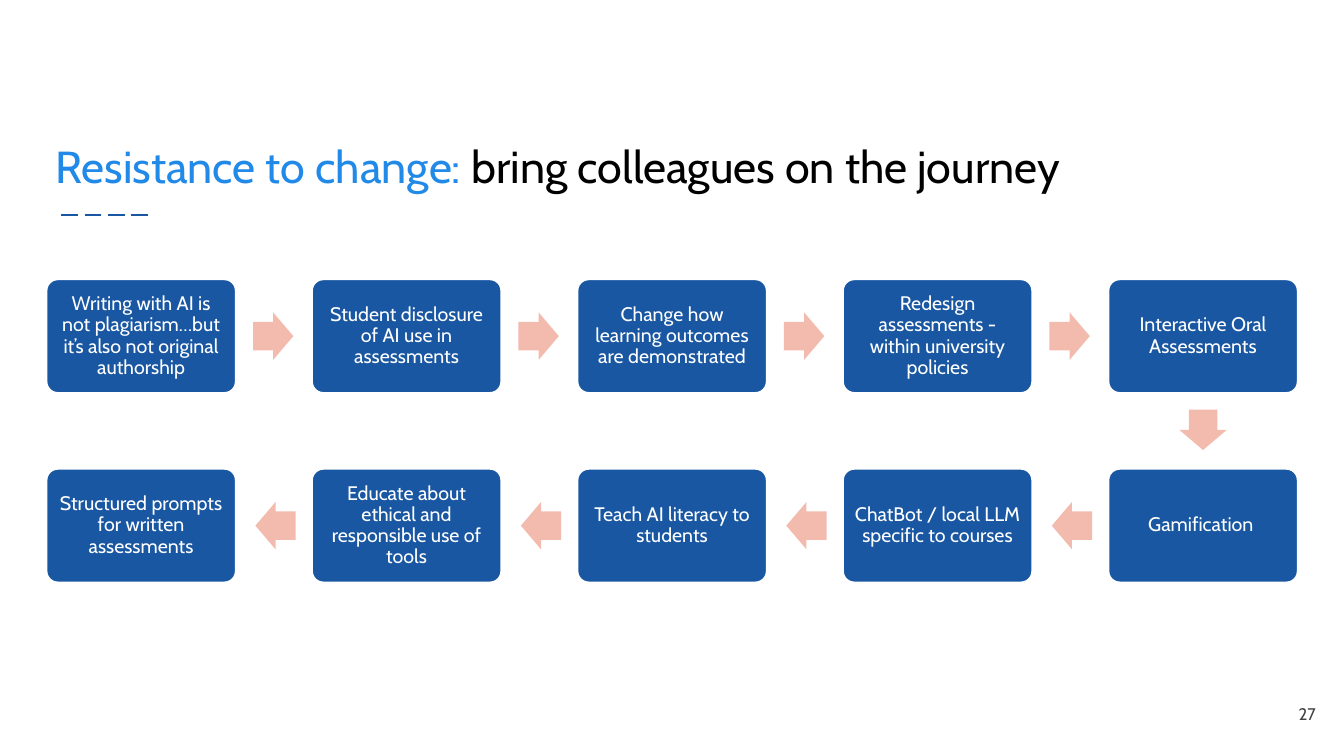
from pptx import Presentation
from pptx.dml.color import RGBColor
from pptx.enum.dml import MSO_LINE
from pptx.enum.shapes import MSO_CONNECTOR, MSO_SHAPE
from pptx.enum.text import MSO_ANCHOR, PP_ALIGN
from pptx.oxml.ns import qn
from pptx.util import Inches, Pt
from lxml import etree

BOX = MSO_SHAPE.ROUNDED_RECTANGLE
ARROW = MSO_SHAPE.RIGHT_ARROW
STRAIGHT = MSO_CONNECTOR.STRAIGHT
DASH = MSO_LINE.LONG_DASH
MIDDLE, BOTTOM = MSO_ANCHOR.MIDDLE, MSO_ANCHOR.BOTTOM
LEFT, CENTER, RIGHT = PP_ALIGN.LEFT, PP_ALIGN.CENTER, PP_ALIGN.RIGHT

COLORS = {
    "navy": "1957A2",
    "blue": "2189E7",
    "pink": "F2BBAE",
    "white": "FFFFFF",
    "black": "000000",
    "gray": "424242",
}
FONT = "Cabin"
COLS = 5
STEP_X, STEP_Y = 2.633, 1.88
BOX_X, BOX_Y, BOX_W, BOX_H = 0.46, 2.77, 1.88, 1.13
ARROW_W, ARROW_H = 0.4, 0.47
STEPS = [
    "Writing with AI is not plagiarism…but it’s also not original authorship",
    "Student disclosure of AI use in assessments",
    "Change how learning outcomes are demonstrated",
    "Redesign assessments - within university policies",
    "Interactive Oral Assessments",
    "Gamification ",
    "ChatBot / local LLM specific to courses",
    "Teach AI literacy to students",
    "Educate about ethical and responsible use of tools",
    "Structured prompts for written assessments",
]


def color(name):
    return RGBColor.from_string(COLORS[name])


def write(shape, parts, size, align, anchor, inset, spacing=None):
    frame = shape.text_frame
    frame.word_wrap = True
    frame.vertical_anchor = anchor
    frame.margin_left = frame.margin_right = Inches(inset)
    frame.margin_top = frame.margin_bottom = Inches(inset)
    para = frame.paragraphs[0]
    para.alignment = align
    if spacing:
        para.line_spacing = spacing
    for text, tone in parts:
        run = para.add_run()
        run.text = text
        run.font.name = FONT
        run.font.size = Pt(size)
        run.font.color.rgb = color(tone)


def add_label(slide, place, *style):
    box = slide.shapes.add_textbox(*map(Inches, place))
    write(box, *style)


def add_dash(slide):
    line = slide.shapes.add_connector(
        STRAIGHT, Inches(0.61), Inches(2.13), Inches(1.51), Inches(2.13))
    line.line.color.rgb = color("navy")
    line.line.width = Pt(1.5)
    line.line.dash_style = DASH
    etree.SubElement(line._element.spPr, qn("a:effectLst"))


def add_solid(slide, kind, place, tone):
    shape = slide.shapes.add_shape(kind, *map(Inches, place))
    shape.shadow.inherit = False
    shape.fill.solid()
    shape.fill.fore_color.rgb = color(tone)
    return shape


def add_step(slide, x, y, text):
    box = add_solid(slide, BOX, (x, y, BOX_W, BOX_H), "navy")
    box.adjustments[0] = 0.1
    box.line.color.rgb = color("white")
    box.line.width = Pt(1.5)
    write(box, [(text, "white")], 14, CENTER, MIDDLE, 0.06, 0.9)


def add_arrow(slide, x, y, angle):
    arrow = add_solid(slide, ARROW, (x, y, ARROW_W, ARROW_H), "pink")
    arrow.adjustments[0] = 0.6
    arrow.adjustments[1] = 0.5
    arrow.line.fill.background()
    arrow.rotation = angle


def add_flow(slide):
    for i, text in enumerate(STEPS):
        row, col = divmod(i, COLS)
        if row:
            col = COLS - 1 - col
        x, y = BOX_X + col * STEP_X, BOX_Y + row * STEP_Y
        add_step(slide, x, y, text)
        mid = y + (BOX_H - ARROW_H) / 2
        if i == COLS - 1:
            add_arrow(slide, x + (BOX_W - ARROW_W) / 2, y + 1.26, 90)
        elif row == 0:
            add_arrow(slide, x + 2.05, mid, 0)
        elif col > 0:
            add_arrow(slide, x - 0.56, mid, 180)


def main():
    deck = Presentation()
    deck.slide_width, deck.slide_height = Inches(13.33), Inches(7.5)
    slide = deck.slides.add_slide(deck.slide_layouts[6])
    add_dash(slide)
    title = [("Resistance to change: ", "blue"),
             ("bring colleagues on the journey", "black")]
    add_label(slide, (0.45, 0.92, 12.42, 1.1), title, 32, LEFT, BOTTOM, 0.1, 0.9)
    add_label(slide, (12.35, 6.8, 0.8, 0.57), [("27", "gray")], 12, RIGHT, MIDDLE, 0.1)
    add_flow(slide)
    deck.save("out.pptx")


if __name__ == "__main__":
    main()
